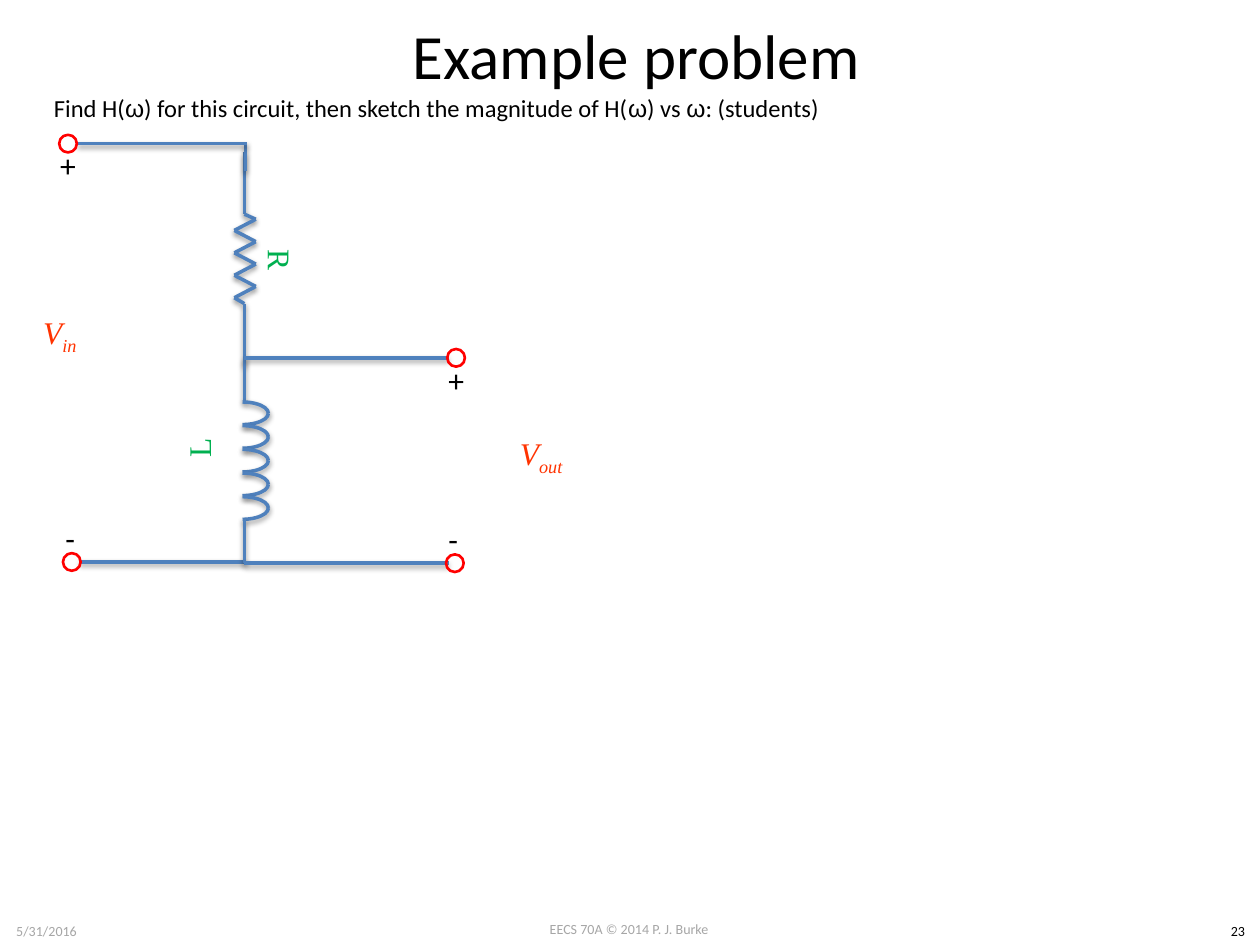
from dataclasses import dataclass
from itertools import pairwise

from lxml.etree import SubElement
from pptx import Presentation
from pptx.dml.color import RGBColor
from pptx.enum.shapes import MSO_CONNECTOR, MSO_SHAPE
from pptx.enum.text import MSO_ANCHOR, PP_ALIGN
from pptx.oxml.ns import qn
from pptx.util import Emu, Inches, Pt

COLUMNS, ROWS = 100, 75  # grid squares of a tenth of an inch


@dataclass(frozen=True)
class Theme:
    ink: str = "000000"
    muted: str = "A6A6A6"
    wire: str = "4F81BD"
    terminal: str = "FF0000"
    component: str = "00B050"
    voltage: str = "FF3300"
    body_font: str = "Calibri"
    greek_font: str = "Arial"
    math_font: str = "Times New Roman"
    title_size: int = 36
    task_size: int = 14
    label_size: int = 18
    footer_size: int = 8
    wire_width: float = 2
    terminal_width: float = 1.5


@dataclass(frozen=True)
class Box:
    """Left, top, width and height in grid squares."""
    left: float
    top: float
    width: float
    height: float

    def emu(self) -> tuple[Emu, Emu, Emu, Emu]:
        return col(self.left), row(self.top), col(self.width), row(self.height)


@dataclass(frozen=True)
class Label:
    text: str
    box: Box
    size: int
    color: str
    font: str = "Calibri"
    align: PP_ALIGN = PP_ALIGN.CENTER
    anchor: MSO_ANCHOR = MSO_ANCHOR.TOP
    rotation: int = 0
    subscript: str = ""
    wrap: bool = True


Point = tuple[float, float]
THEME = Theme()
deck = Presentation()
deck.slide_width, deck.slide_height = Inches(10), Inches(7.5)
slide = deck.slides.add_slide(deck.slide_layouts[6])


def col(n: float) -> Emu:
    return Emu(round(deck.slide_width * n / COLUMNS))


def row(n: float) -> Emu:
    return Emu(round(deck.slide_height * n / ROWS))


def add_label(parent, label: Label):
    box = parent.add_textbox(*label.box.emu())
    box.rotation = label.rotation
    frame = box.text_frame
    frame.word_wrap = label.wrap
    frame.vertical_anchor = label.anchor
    paragraph = frame.paragraphs[0]
    paragraph.alignment = label.align
    font = paragraph.font
    font.name, font.size = label.font, Pt(label.size)
    font.color.rgb = RGBColor.from_string(label.color)
    if label.text:
        paragraph.add_run().text = label.text
    if label.subscript:
        font.italic = True
        lowered = paragraph.add_run()
        lowered.text = label.subscript
        lowered.font._element.set("baseline", "-25000")
    return paragraph


def style_wire(part) -> None:
    """Blue line with a soft shadow straight below."""
    part.line.color.rgb = RGBColor.from_string(THEME.wire)
    part.line.width = Pt(THEME.wire_width)
    effects = SubElement(part._element.spPr, qn("a:effectLst"))
    shadow = SubElement(effects, qn("a:outerShdw"), blurRad=str(Pt(3.1)),
                        dist=str(Pt(1.6)), dir="5400000", rotWithShape="0")
    black = SubElement(shadow, qn("a:srgbClr"), val=THEME.ink)
    SubElement(black, qn("a:alpha"), val="38000")


def add_wire(parent, start: Point, end: Point) -> None:
    style_wire(parent.add_connector(MSO_CONNECTOR.STRAIGHT, col(start[0]), row(start[1]),
                                    col(end[0]), row(end[1])))


def add_half_turn(parent, box: Box, lower: bool) -> None:
    arc = parent.add_shape(MSO_SHAPE.ARC, *box.emu())
    arc.fill.background()
    style_wire(arc)
    if lower:
        arc._element.spPr.find(qn("a:xfrm")).set("flipV", "1")


def add_terminal(parent, left: float, top: float) -> None:
    ring = parent.add_shape(MSO_SHAPE.OVAL, *Box(left, top, 1.4, 1.4).emu())
    ring.shadow.inherit = False
    ring.fill.background()
    ring.line.color.rgb = RGBColor.from_string(THEME.terminal)
    ring.line.width = Pt(THEME.terminal_width)


def add_sign(parent, sign: str, left: float, top: float) -> None:
    width = 3.3 if sign == "+" else 2.8
    add_label(parent, Label(sign, Box(left, top, width, 4), THEME.label_size, THEME.ink,
                            align=PP_ALIGN.LEFT, wrap=False))


def add_component_name(parent, name: str, left: float, top: float, rotation: int) -> None:
    add_label(parent, Label(name, Box(left, top, 11.9, 7.3), THEME.label_size, THEME.component,
                            THEME.math_font, anchor=MSO_ANCHOR.MIDDLE, rotation=rotation))


def add_voltage(parent, subscript: str, left: float, top: float) -> None:
    add_label(parent, Label("V", Box(left, top, 7.7, 6.1), THEME.label_size, THEME.voltage,
                            THEME.math_font, anchor=MSO_ANCHOR.MIDDLE, subscript=subscript))


# Footer, title and task
for footer in (
    Label("EECS 70A © 2014 P. J. Burke", Box(38.3, 72.6, 23.3, 2.4), THEME.footer_size, THEME.muted),
    Label("5/31/2016", Box(0, 72.7, 7.4, 2.4), THEME.footer_size, THEME.muted),
    Label("23", Box(96.5, 72.7, 3.5, 2.4), THEME.footer_size, THEME.ink),
):
    add_label(slide.shapes, footer)
add_label(slide.shapes, Label("Example problem", Box(5.5, 0, 90, 8.7), THEME.title_size,
                              THEME.ink, anchor=MSO_ANCHOR.MIDDLE))
task = add_label(slide.shapes, Label("", Box(3.3, 6.9, 89.1, 3.4), THEME.task_size,
                                     THEME.ink, align=PP_ALIGN.LEFT))
indent = col(3.8)
task._p.get_or_add_pPr().set("marL", str(indent))
task._p.get_or_add_pPr().set("indent", str(-indent))
for words in ("Find H(", "ω", ") for this circuit, then sketch the magnitude of H(", "ω",
              ") vs ", "ω", ": (students)"):
    run = task.add_run()
    run.text = words
    run.font.name = THEME.greek_font if words == "ω" else THEME.body_font

# Resistor: zigzag between two leads
STEM = 19.4
resistor = slide.shapes.add_group_shape().shapes
add_component_name(resistor, "R", 16.3, 17, 90)
bends = [(18.6 if i % 2 else 20.3, 17.4 + 0.89 * i) for i in range(8)]
zigzag = [(STEM, 12.1), (STEM, 17), *bends, (STEM, 24.1), (STEM, 29)]
for start, end in pairwise(zigzag):
    add_wire(resistor, start, end)

# Input wires
for start, end in (((6.3, 44.6), (19.5, 44.6)), ((19.5, 13.6), (19.5, 11.4)),
                   ((19.6, 11.4), (6.2, 11.4))):
    add_wire(slide.shapes, start, end)

# Inductor: five turns of two quarter arcs between two leads
inductor = slide.shapes.add_group_shape().shapes
add_wire(inductor, (STEM, 31.9), (STEM, 28.4))
for turn in range(5):
    for lower in (False, True):
        add_half_turn(inductor, Box(17.2, 31.9 + 1.88 * turn, 4.1, 1.8), lower)
add_wire(inductor, (STEM, 44.7), (STEM, 41.2))
add_component_name(slide.shapes, "L", 9.8, 31.9, 270)

# Output wires and port
for level in (28.4, 44.7):
    add_wire(slide.shapes, (STEM, level), (35.6, level))
output = slide.shapes.add_group_shape().shapes
add_voltage(output, "out", 39.1, 33.1)
add_terminal(output, 35.5, 27.7)
add_terminal(output, 35.4, 44)
add_sign(output, "+", 34.6, 28.2)
add_sign(output, "-", 34.6, 40.8)

# Input port
add_voltage(slide.shapes, "in", 0.9, 23.5)
add_terminal(slide.shapes, 4.7, 10.7)
add_terminal(slide.shapes, 5, 43.9)
add_sign(slide.shapes, "+", 3.8, 11.1)
add_sign(slide.shapes, "-", 4.2, 40.7)

deck.save("out.pptx")
